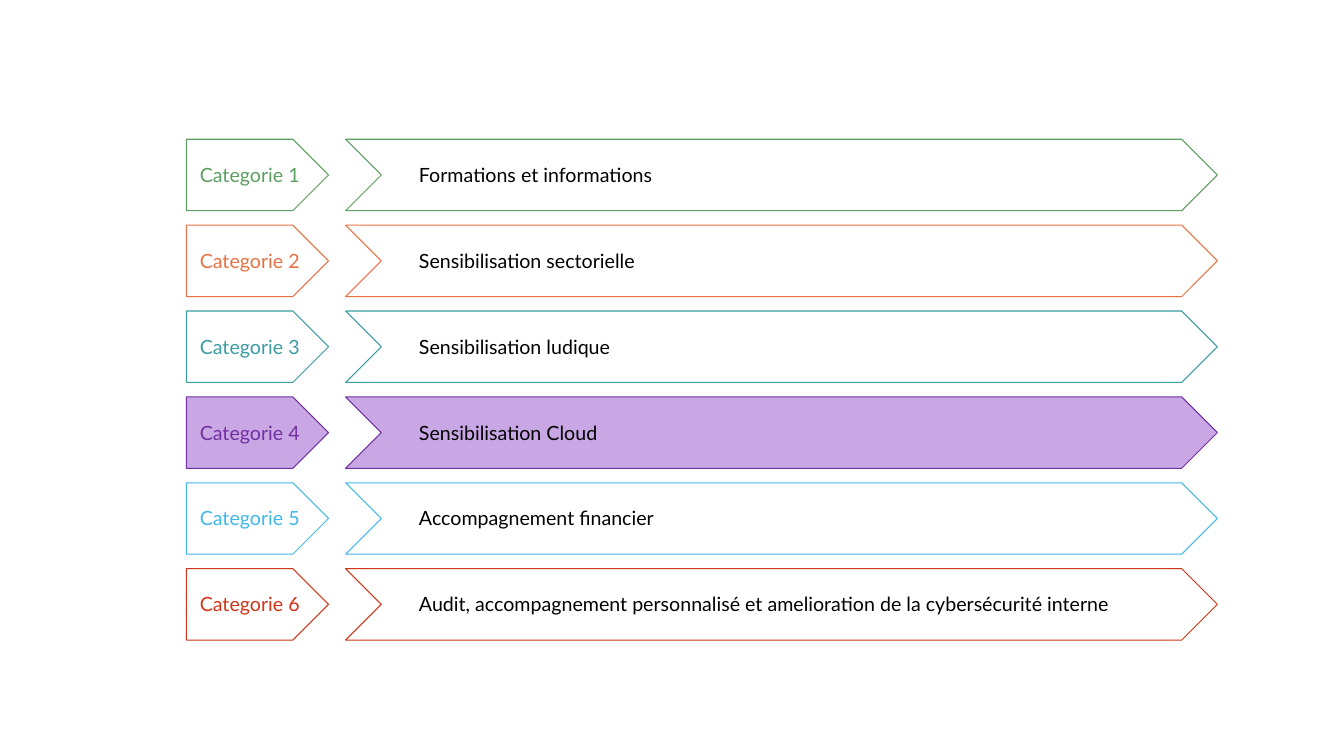
from pptx import Presentation
from pptx import util as u
from pptx.dml.color import RGBColor
from pptx.enum import shapes, text

CATEGORIES = [
    ("Formations et informations", "5B9F61", None),
    ("Sensibilisation sectorielle", "E87244", None),
    ("Sensibilisation ludique", "3B9CA2", None),
    ("Sensibilisation Cloud", "7030A0", "C9A6E4"),
    ("Accompagnement financier", "41B7EA", None),
    ("Audit, accompagnement personnalisé et amelioration de la cybersécurité interne",
     "D23417", None),
]
ROW_HEIGHT = u.Cm(1.8)
TEXT_HEIGHT = u.Cm(0.86)


def color(code):
    return RGBColor.from_string(code)


def add_arrow(slide, preset, left, top, width, outline, highlight):
    arrow = slide.shapes.add_shape(preset, left, top, width, ROW_HEIGHT)
    arrow.shadow.inherit = False
    if highlight:
        arrow.fill.solid()
        arrow.fill.fore_color.rgb = color(highlight)
    else:
        arrow.fill.background()
    arrow.line.color.rgb = color(outline)
    arrow.line.width = u.Pt(0.75)


def add_caption(slide, wording, left, row_top, width, ink, alignment):
    top = row_top + (ROW_HEIGHT - TEXT_HEIGHT) // 2
    caption = slide.shapes.add_textbox(left, top, width, TEXT_HEIGHT)
    frame = caption.text_frame
    frame.word_wrap = True
    frame.auto_size = text.MSO_AUTO_SIZE.SHAPE_TO_FIT_TEXT
    paragraph = frame.paragraphs[0]
    paragraph.text = wording
    paragraph.alignment = alignment
    paragraph.font.name = "Lato"
    paragraph.font.size = u.Pt(14)
    paragraph.font.color.rgb = color(ink)


def add_category(slide, left, top, width, number, description, accent, highlight):
    label_width = u.Cm(3.58)
    band_offset = u.Cm(4.01)
    add_arrow(slide, shapes.MSO_SHAPE.PENTAGON, left, top, label_width,
              accent, highlight)
    add_arrow(slide, shapes.MSO_SHAPE.CHEVRON, left + band_offset, top,
              width - band_offset, accent, highlight)
    add_caption(slide, f"Categorie {number}", left - u.Cm(1.63), top, u.Cm(6.45),
                accent, text.PP_ALIGN.CENTER)
    add_caption(slide, description, left + u.Cm(5.61), top, u.Cm(19.3),
                "000000", text.PP_ALIGN.LEFT)


def add_category_list(slide, left, top, width, height):
    pitch = (height - ROW_HEIGHT) / (len(CATEGORIES) - 1)
    for index, (description, accent, highlight) in enumerate(CATEGORIES):
        add_category(slide, left, top + round(index * pitch), width, index + 1,
                     description, accent, highlight)


def main():
    deck = Presentation()
    deck.slide_width = u.Cm(33.87)
    deck.slide_height = u.Cm(19.05)
    slide = deck.slides.add_slide(deck.slide_layouts[6])
    add_category_list(slide, u.Cm(4.7), u.Cm(3.51), u.Cm(25.98), u.Cm(12.62))
    deck.save("out.pptx")


if __name__ == "__main__":
    main()
